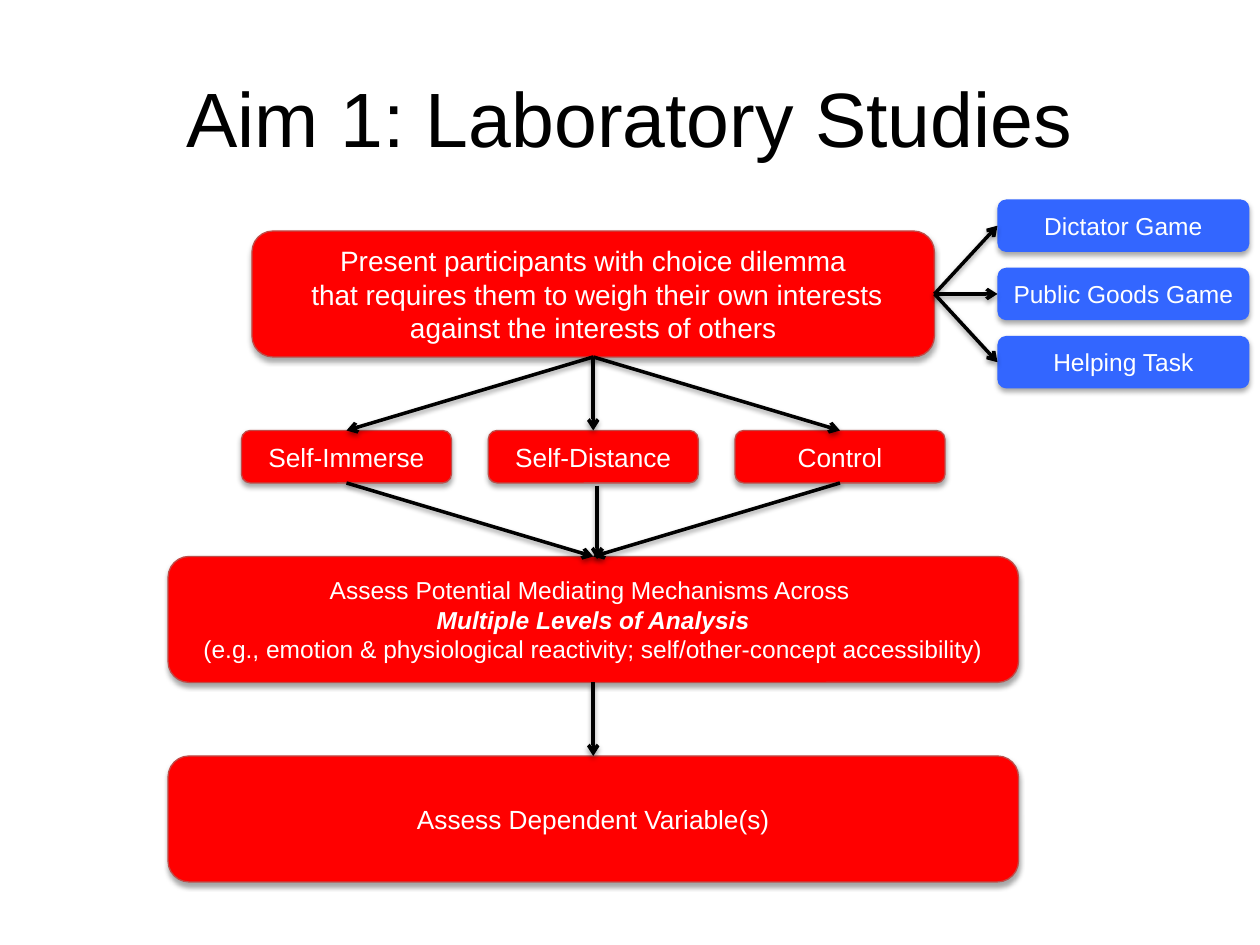
"""Build the flow chart slide for the Aim 1 laboratory studies."""
from lxml import etree
from pptx import Presentation
from pptx import util as u
from pptx.dml.color import RGBColor
from pptx.enum import shapes, text
from pptx.oxml.ns import qn

PX = 9525
RED = RGBColor(0xFF, 0x00, 0x00)
RUST = RGBColor(0xBF, 0x4C, 0x48)
BLUE = RGBColor(0x33, 0x66, 0xFF)
WHITE = RGBColor(0xFF, 0xFF, 0xFF)
BLACK = RGBColor(0x00, 0x00, 0x00)

CENTER = 452
GAMES = ["Dictator Game", "Public Goods Game", "Helping Task"]
CONDITIONS = ["Self-Immerse", "Self-Distance", "Control"]
DILEMMA = [
    "Present participants with choice dilemma",
    " that requires them to weigh their own interests against the interests of others",
]
EMPHASIS = "Multiple Levels of Analysis"
MECHANISMS = [
    "Assess Potential Mediating Mechanisms Across ",
    EMPHASIS,
    "(e.g., emotion & physiological reactivity; self/other-concept accessibility)",
]


def write(shape, lines, size, color):
    frame = shape.text_frame
    frame.word_wrap = True
    frame.vertical_anchor = text.MSO_ANCHOR.MIDDLE
    for index, line in enumerate(lines):
        paragraph = frame.add_paragraph() if index else frame.paragraphs[0]
        paragraph.alignment = text.PP_ALIGN.CENTER
        run = paragraph.add_run()
        run.text = line
        run.font.name = "Arial"
        run.font.size = u.Pt(size)
        run.font.color.rgb = color
        if line == EMPHASIS:
            run.font.bold = run.font.italic = True


def add_shadow(properties, distance, opacity):
    effects = properties.find(qn("a:effectLst"))
    if effects is None:
        effects = etree.SubElement(properties, qn("a:effectLst"))
    shadow = etree.SubElement(
        effects, qn("a:outerShdw"), blurRad=str(u.Pt(3.1)),
        dist=str(u.Pt(distance)), dir="5400000", rotWithShape="0")
    color = etree.SubElement(shadow, qn("a:srgbClr"), val="000000")
    etree.SubElement(color, qn("a:alpha"), val=str(opacity * 1000))


presentation = Presentation()
presentation.slide_width = 960 * PX
presentation.slide_height = 720 * PX
slide = presentation.slides.add_slide(presentation.slide_layouts[6])

title = slide.shapes.add_textbox(48 * PX, 29 * PX, 864 * PX, 120 * PX)
write(title, ["Aim 1: Laboratory Studies"], 44, BLACK)

boxes = [
    (192, 176, 520, 96, RED, 16, DILEMMA),
    (128, 424, 648, 96, RED, 14, MECHANISMS),
    (128, 576, 648, 96, RED, 15, ["Assess Dependent Variable(s)"]),
]
arrows = [(CENTER, 520, CENTER, 576)]
for index, (game, condition) in enumerate(zip(GAMES, CONDITIONS)):
    game_top = 152 + 52 * index
    left = 184 + 188 * index
    middle = left + 80
    boxes.append((760, game_top, 192, 40, BLUE, 14, [game]))
    boxes.append((left, 328, 160, 40, RED, 15, [condition]))
    arrows.append((712, 224, 760, game_top + 20))
    arrows.append((CENTER, 272, middle, 328))
    if middle == CENTER:
        arrows.append((455, 370, 455, 426))
    else:
        arrows.append((middle, 368, CENTER, 424))

for left, top, width, height, fill, size, lines in boxes:
    box = slide.shapes.add_shape(
        shapes.MSO_SHAPE.FLOWCHART_ALTERNATE_PROCESS,
        left * PX, top * PX, width * PX, height * PX)
    box.shadow.inherit = False
    box.fill.solid()
    box.fill.fore_color.rgb = fill
    if fill == RED:
        box.line.color.rgb = RUST
        box.line.width = u.Pt(0.75)
    else:
        box.line.fill.background()
    add_shadow(box.element.spPr, 1.8, 35)
    write(box, lines, size, WHITE)

for points in arrows:
    arrow = slide.shapes.add_connector(
        shapes.MSO_CONNECTOR.STRAIGHT, *[point * PX for point in points])
    arrow.line.color.rgb = BLACK
    arrow.line.width = u.Pt(2)
    etree.SubElement(arrow.line._get_or_add_ln(), qn("a:tailEnd"), type="arrow")
    add_shadow(arrow.element.spPr, 1.6, 38)

presentation.save("out.pptx")
